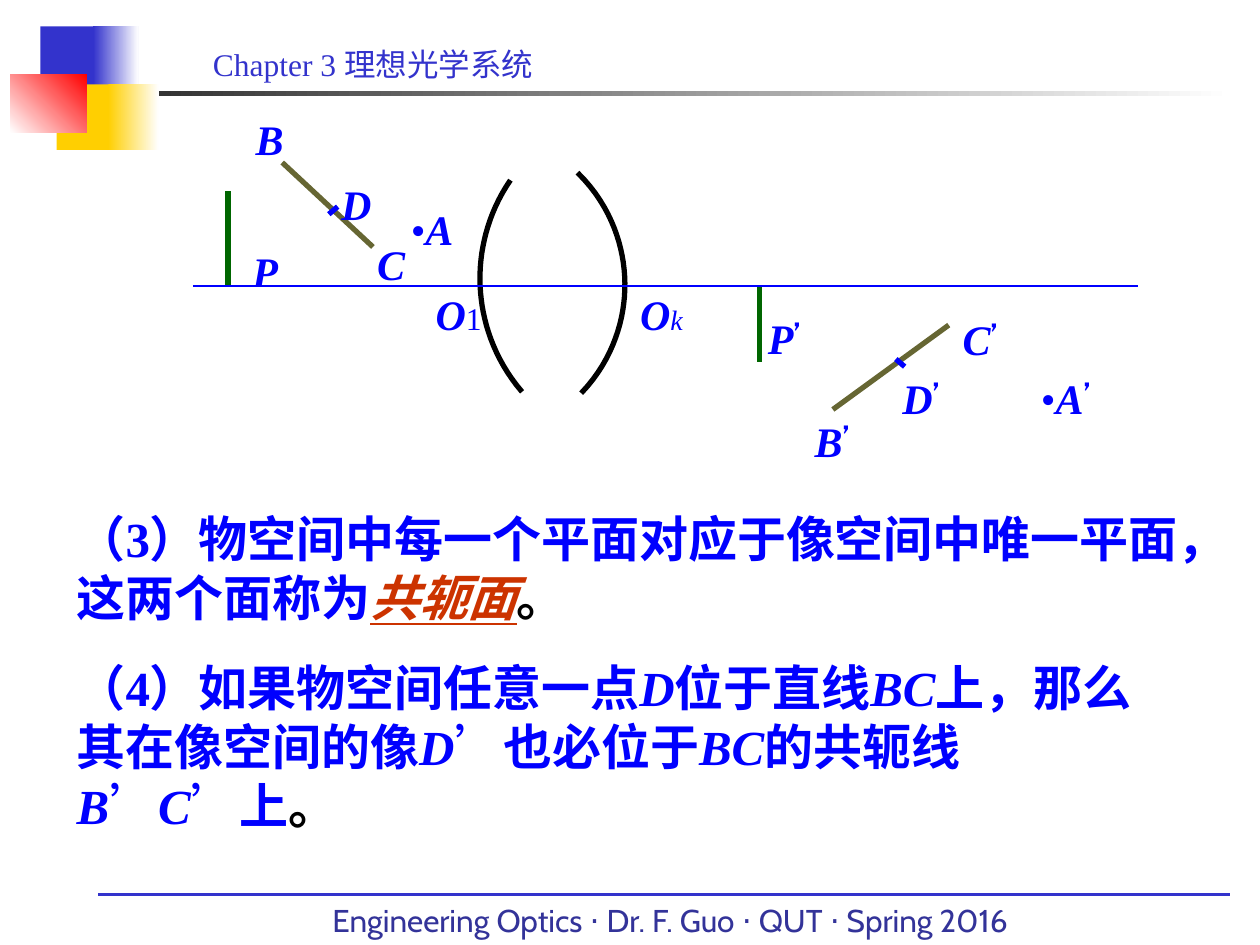
"""Build the optics slide on conjugate planes, lines and points."""
from math import sqrt

from lxml.etree import SubElement
from pptx import Presentation
from pptx.dml.color import RGBColor
from pptx.enum.shapes import MSO_CONNECTOR as LINE, MSO_SHAPE as SHAPE
from pptx.enum.text import MSO_ANCHOR as ANCHOR, PP_ALIGN as ALIGN
from pptx.oxml.ns import qn
from pptx.util import Inches, Pt

BLUE = RGBColor(0x00, 0x00, 0xFF)
INDIGO = RGBColor(0x33, 0x33, 0xCC)
NAVY = RGBColor(0x33, 0x33, 0x99)
YELLOW = RGBColor(0xFF, 0xCF, 0x01)
RED = RGBColor(0xFF, 0x00, 0x00)
RUST = RGBColor(0xCC, 0x33, 0x00)
OLIVE = RGBColor(0x66, 0x66, 0x33)
GREEN = RGBColor(0x00, 0x66, 0x00)
CHARCOAL = RGBColor(0x1C, 0x1C, 0x1C)
BLACK = RGBColor(0x00, 0x00, 0x00)
WHITE = RGBColor(0xFF, 0xFF, 0xFF)

SERIF, SANS = "Times New Roman", "Cabin"
PLAIN = {}
BOLD = {"bold": True}
SYMBOL = {"bold": True, "italic": True}
PRIME = ("’", {"name": SANS})
STOP = ("。", {"bold": True, "color": BLACK})

prs = Presentation()
prs.slide_width, prs.slide_height = Inches(10), Inches(7.5)
slide = prs.slides.add_slide(prs.slide_layouts[6])
shapes = slide.shapes


def add_text(left, top, width, height, runs, size, color=BLUE, name=SERIF, align=ALIGN.LEFT):
    box = shapes.add_textbox(Inches(left), Inches(top), Inches(width), Inches(height))
    frame = box.text_frame
    frame.word_wrap = True
    paragraph = frame.paragraphs[0]
    paragraph.alignment = align
    paragraph.font.name, paragraph.font.size = name, Pt(size)
    paragraph.font.color.rgb = color
    for text, style in runs:
        run = paragraph.add_run()
        run.text = text
        for key, value in style.items():
            if key == "color":
                run.font.color.rgb = value
            else:
                setattr(run.font, key, value)
    return frame


def add_line(start, end, color, weight=3):
    line = shapes.add_connector(LINE.STRAIGHT, *map(Inches, start + end))
    line.line.color.rgb = color
    line.line.width = Pt(weight)
    SubElement(line._element.spPr, qn("a:effectLst"))


# left, top, width, height, start colour, end colour, angle
for left, top, width, height, first, last, angle in [
    (0.27, 0.72, 9.51, 0.04, CHARCOAL, WHITE, 0),
    (0.32, 0.21, 0.48, 0.52, INDIGO, None, 0),
    (0.74, 0.21, 0.36, 0.52, INDIGO, WHITE, 0),
    (0.45, 0.67, 0.46, 0.52, YELLOW, None, 0),
    (0.86, 0.67, 0.4, 0.52, YELLOW, WHITE, 0),
    (0.08, 0.59, 0.61, 0.46, WHITE, RED, 45),
]:
    block = shapes.add_shape(SHAPE.RECTANGLE, Inches(left), Inches(top), Inches(width), Inches(height))
    block.shadow.inherit = False
    block.line.fill.background()
    if last is None:
        block.fill.solid()
        block.fill.fore_color.rgb = first
    else:
        block.fill.gradient()
        block.fill.gradient_angle = angle
        for stop, color in zip(block.fill.gradient_stops, (first, last)):
            stop.color.rgb = color

add_line((0.78, 7.1), (9.76, 7.1), INDIGO, 1.5)
chapter = add_text(0.5, 0.21, 4.42, 0.5, [("Chapter 3 理想光学系统", PLAIN)], 18, INDIGO, align=ALIGN.CENTER)
chapter.vertical_anchor = ANCHOR.BOTTOM
chapter.margin_left = Inches(0.6)
add_text(2.54, 7.1, 7.5, 0.4, [("Engineering Optics ⋅ Dr. F. Guo ⋅ QUT ⋅ Spring 2016", PLAIN)], 18, NAVY, SANS)

for start, end, color in [
    ((7.53, 2.58), (6.61, 3.25), OLIVE),
    ((2.24, 1.29), (2.96, 1.96), OLIVE),
    ((7.11, 2.85), (7.18, 2.91), BLUE),
    ((2.68, 1.64), (2.61, 1.7), BLUE),
    ((1.81, 1.52), (1.81, 2.26), GREEN),
    ((6.03, 2.27), (6.03, 2.87), GREEN),
]:
    add_line(start, end, color)

ARC_STEPS = 32
for apex_x, apex_y, radius, side, top, bottom in [
    (4.96, 2.26, 1.24, -1, 1.37, 3.12),
    (3.81, 2.21, 1.38, 1, 1.43, 3.11),
]:
    heights = [top + (bottom - top) * step / ARC_STEPS for step in range(ARC_STEPS + 1)]
    points = [
        (Inches(apex_x + side * (radius - sqrt(radius**2 - (y - apex_y) ** 2))), Inches(y))
        for y in heights
    ]
    outline = shapes.build_freeform(*points[0])
    outline.add_line_segments(points[1:], close=False)
    lens = outline.convert_to_shape()
    lens.shadow.inherit = False
    lens.fill.background()
    lens.line.color.rgb = BLACK
    lens.line.width = Pt(3)

add_line((1.53, 2.27), (9.03, 2.27), BLUE, 1.5)

DOT = ("•", PLAIN)
for left, top, width, runs in [
    (7.03, 2.91, 0.56, [("D", SYMBOL), PRIME]),
    (2.61, 1.37, 0.43, [("D", SYMBOL)]),
    (1.82, 1.9, 0.57, [("P", SYMBOL)]),
    (3.11, 1.57, 0.64, [DOT, ("A", SYMBOL)]),
    (8.03, 2.91, 0.86, [DOT, ("A", SYMBOL), PRIME]),
    (5.94, 2.43, 0.57, [("P", SYMBOL), PRIME]),
    (3.32, 2.24, 0.64, [("O", SYMBOL), ("1", {"size": Pt(18)})]),
    (4.82, 2.24, 0.86, [("O", SYMBOL), ("k", {"size": Pt(16), "italic": True})]),
    (2.82, 1.84, 0.57, [("C", SYMBOL)]),
    (7.46, 2.44, 0.64, [("C", SYMBOL), PRIME]),
    (6.32, 3.25, 0.57, [("B", SYMBOL), PRIME]),
    (1.93, 0.85, 0.39, [("B", SYMBOL)]),
]:
    add_text(left, top, width, 0.5, runs, 24, align=ALIGN.CENTER)

add_text(0.51, 3.99, 9.06, 1.03, [
    ("（3）物空间中每一个平面对应于像空间中唯一平面，这两个面称为", BOLD),
    ("共轭面", {**SYMBOL, "underline": True, "color": RUST}),
    STOP,
], 28)
add_text(0.51, 5.17, 8.76, 1.03, [
    ("（4）如果物空间任意一点", BOLD), ("D", SYMBOL),
    ("位于直线", BOLD), ("BC", SYMBOL),
    ("上，那么其在像空间的像", BOLD), ("D", SYMBOL), PRIME,
    ("也必位于", BOLD), ("BC", SYMBOL),
    ("的共轭线", BOLD), ("B", SYMBOL), PRIME, ("C", SYMBOL), PRIME,
    ("上", BOLD), STOP,
], 28)

prs.save("out.pptx")
